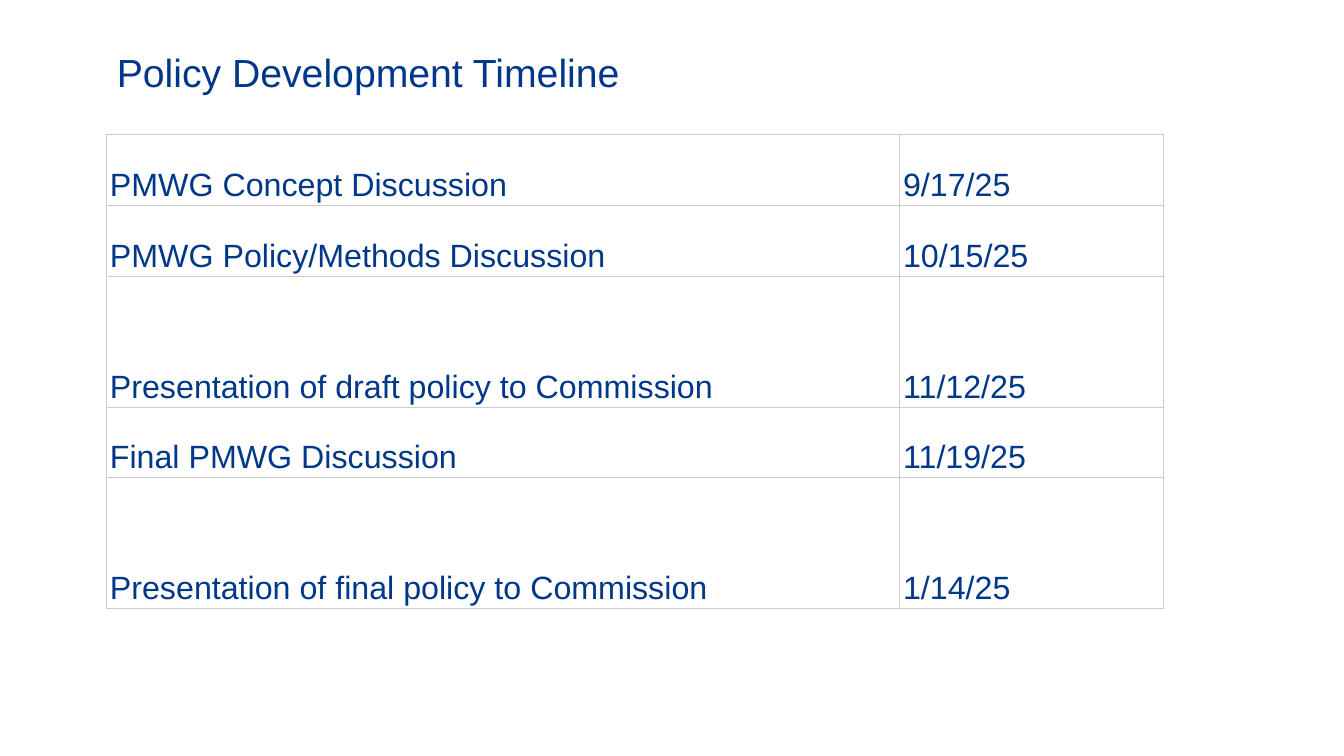
"""Build the policy development timeline slide."""
from dataclasses import dataclass

from lxml import etree
from pptx import Presentation
from pptx import util as u
from pptx.dml.color import RGBColor
from pptx.enum import text
from pptx.oxml import ns


@dataclass(frozen=True)
class Theme:
    """Hold the colours, font and type sizes."""
    ink: str = "003889"
    rule: str = "CCCCCC"
    font: str = "Arial"
    title_size: float = 28
    table_size: float = 23
    rule_width: float = 0.75


THEME = Theme()
SHORT_ROW, TALL_ROW = u.Cm(1.78), u.Cm(3.3)
COLUMN_WIDTHS = (u.Cm(19.99), u.Cm(6.65))
MILESTONES = (
    ("PMWG Concept Discussion", "9/17/25", SHORT_ROW),
    ("PMWG Policy/Methods Discussion", "10/15/25", SHORT_ROW),
    ("Presentation of draft policy to Commission", "11/12/25", TALL_ROW),
    ("Final PMWG Discussion", "11/19/25", SHORT_ROW),
    ("Presentation of final policy to Commission", "1/14/25", TALL_ROW),
)


def add_span(para, words, size):
    """Add one run in the theme's font and ink."""
    span = para.add_run()
    span.text = words
    span.font.name = THEME.font
    span.font.size = u.Pt(size)
    span.font.bold = False
    span.font.color.rgb = RGBColor.from_string(THEME.ink)


def set_title(page, words):
    """Place and fill the title placeholder."""
    box = page.shapes.title
    box.left, box.top = u.Cm(2.69), u.Cm(0.97)
    box.width, box.height = u.Cm(29.21), u.Cm(1.68)
    frame = box.text_frame
    frame.word_wrap = True
    frame.auto_size = text.MSO_AUTO_SIZE.NONE
    frame.vertical_anchor = text.MSO_ANCHOR.MIDDLE
    para = frame.paragraphs[0]
    para.alignment = text.PP_ALIGN.LEFT
    add_span(para, words, THEME.title_size)


def add_borders(cell):
    """Draw a thin rule on all four sides of a cell."""
    properties = cell._tc.get_or_add_tcPr()
    for side in ("lnL", "lnR", "lnT", "lnB"):
        line = etree.SubElement(properties, ns.qn(f"a:{side}"),
                                w=str(u.Pt(THEME.rule_width)))
        fill = etree.SubElement(line, ns.qn("a:solidFill"))
        etree.SubElement(fill, ns.qn("a:srgbClr"), val=THEME.rule)


def fill_cell(cell, words):
    """Write and format one bottom-aligned cell."""
    cell.margin_left = cell.margin_right = u.Cm(0.08)
    cell.margin_top = cell.margin_bottom = u.Cm(0.05)
    cell.vertical_anchor = text.MSO_ANCHOR.BOTTOM
    add_borders(cell)
    cell.fill.background()
    para = cell.text_frame.paragraphs[0]
    para.line_spacing = 1.15
    add_span(para, words, THEME.table_size)


def add_timeline(page):
    """Add the table of milestones and dates."""
    height = sum(row_height for _, _, row_height in MILESTONES)
    table = page.shapes.add_table(
        len(MILESTONES), len(COLUMN_WIDTHS),
        u.Cm(2.69), u.Cm(3.4), sum(COLUMN_WIDTHS), height).table
    table.first_row = table.horz_banding = False
    for column, width in zip(table.columns, COLUMN_WIDTHS):
        column.width = width
    for row, (milestone, date, row_height) in zip(table.rows, MILESTONES):
        row.height = row_height
        for cell, words in zip(row.cells, (milestone, date)):
            fill_cell(cell, words)


def main():
    """Build and save the deck."""
    deck = Presentation()
    deck.slide_width, deck.slide_height = u.Cm(33.87), u.Cm(19.05)
    page = deck.slides.add_slide(deck.slide_layouts.get_by_name("Title Only"))
    set_title(page, "Policy Development Timeline")
    add_timeline(page)
    deck.save("out.pptx")


if __name__ == "__main__":
    main()
